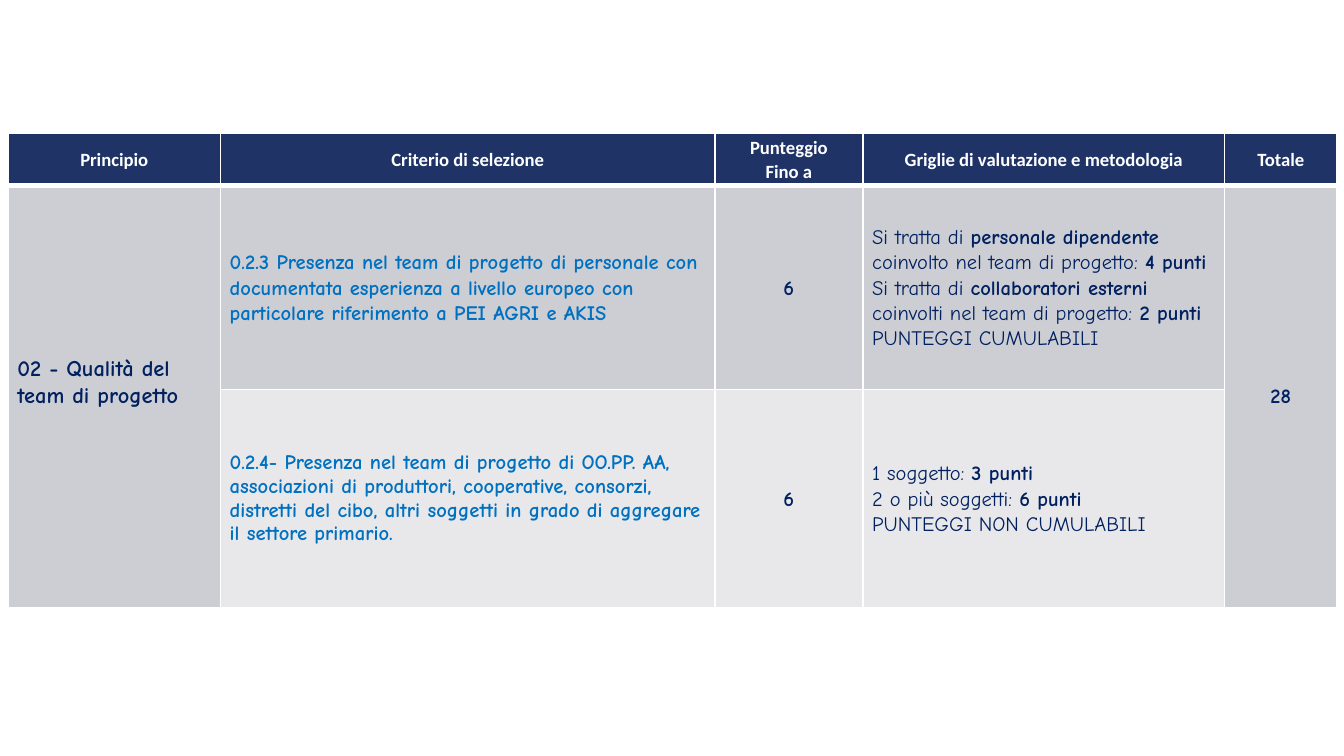
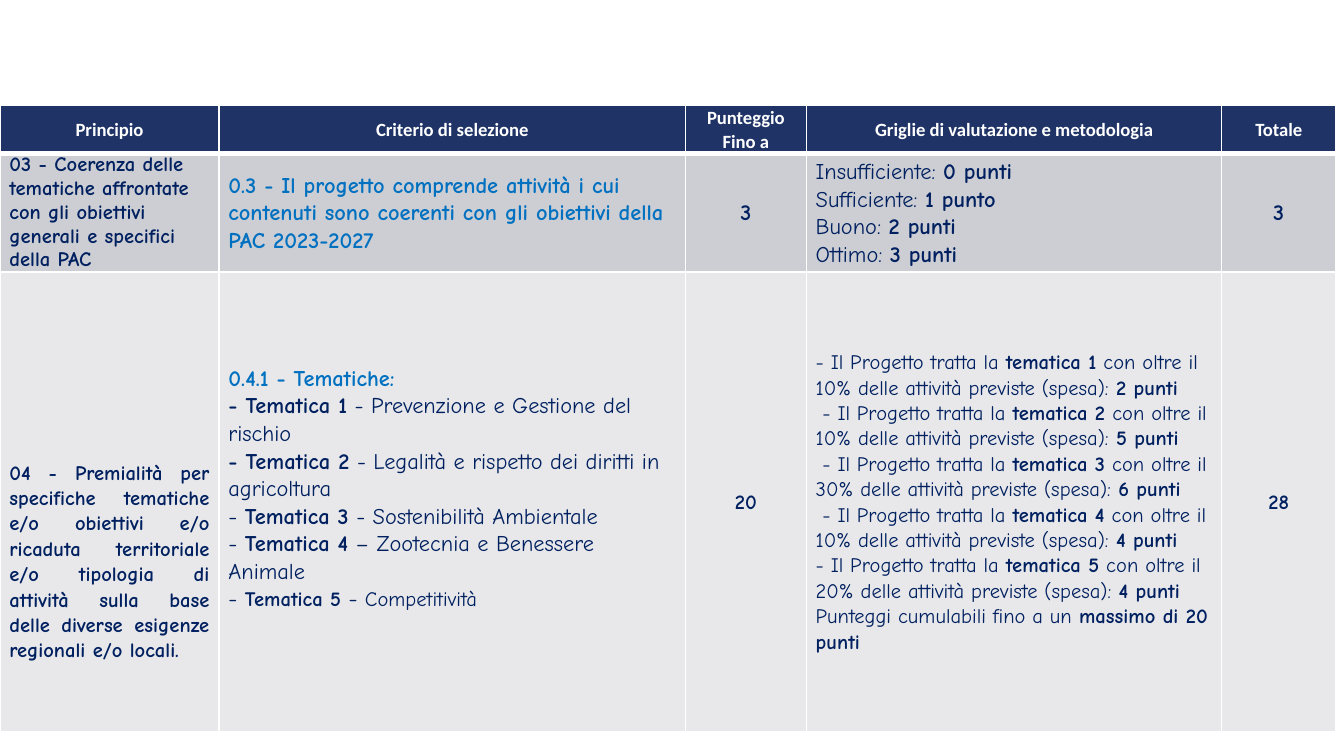
from lxml import etree
from pptx import Presentation
from pptx import util as u
from pptx.dml.color import RGBColor
from pptx.enum import text
from pptx.oxml.ns import qn

SLIDE_WIDTH = u.Inches(10)
SLIDE_HEIGHT = SLIDE_WIDTH * 9 // 16
WHITE, NAVY, DARK, BLUE = "FEFFFE", "1F3366", "002060", "0070C0"
BANDS = ["CDCED3", "E8E8EA"]
ALIGN = {"left": text.PP_ALIGN.LEFT, "center": text.PP_ALIGN.CENTER, "justify": text.PP_ALIGN.JUSTIFY}
ANCHOR = {"middle": text.MSO_ANCHOR.MIDDLE, "bottom": text.MSO_ANCHOR.BOTTOM}

HEADER = [
    ["Principio"],
    ["Criterio di selezione"],
    ["Punteggio", "Fino a"],
    ["Griglie di valutazione e metodologia"],
    ["Totale"],
]
HEADER_STYLE = dict(size=10, font="Calibri", color=WHITE, align="center")
COLUMN_STYLES = [
    dict(),
    dict(color=BLUE),
    dict(align="center"),
    dict(bold=False),
    dict(align="center"),
]


def theme_score(number, share, points, indent=0.0):
    line = f"- Il Progetto tratta la **tematica {number}** con oltre il {share}% delle attività previste (spesa): **{points} punti**"
    return dict(content=line, indent=indent)


TABLES = [
    dict(
        left=0.06, top=0.99,
        columns=[1.58, 3.68, 1.1, 2.69, 0.84],
        rows=[0.39, 1.52, 1.62],
        merged_columns=[0, 4],
        body=[
            [
                dict(lines=["02 - Qualità del team di progetto"], size=12, bottom=0.22),
                dict(lines=["0.2.3 Presenza nel team di progetto di personale con documentata esperienza a livello europeo con particolare riferimento a PEI AGRI e AKIS"]),
                dict(lines=["6"]),
                dict(lines=[
                    "Si tratta di **personale dipendente** coinvolto nel team di progetto: **4 punti**",
                    "Si tratta di **collaboratori esterni** coinvolti nel team di progetto: **2 punti**",
                    "PUNTEGGI CUMULABILI",
                ]),
                dict(lines=["28"], spacing=1.0),
            ],
            [
                None,
                dict(lines=["0.2.4- Presenza nel team di progetto di OO.PP. AA, associazioni di produttori, cooperative, consorzi, distretti del cibo, altri soggetti in grado di aggregare il settore primario."], spacing=1.0),
                dict(lines=["6"]),
                dict(lines=["1 soggetto: **3 punti**", "2 o più soggetti: **6 punti**", "PUNTEGGI NON CUMULABILI"]),
                None,
            ],
        ],
    ),
    dict(
        left=0, top=0.78,
        columns=[1.63, 3.47, 0.9, 3.09, 0.85],
        rows=[0.34, 0.81, 3.42],
        merged_columns=[],
        body=[
            [
                dict(lines=["03 - Coerenza delle tematiche affrontate con gli obiettivi generali e specifici della PAC"], spacing=1.0),
                dict(lines=["0.3 - Il progetto comprende attività i cui contenuti sono coerenti con gli obiettivi della PAC 2023-2027"], size=12),
                dict(lines=["3"], size=12),
                dict(lines=["Insufficiente: **0 punti**", "Sufficiente: **1 punto**", "Buono: **2 punti**", "Ottimo: **3 punti**"], size=12),
                dict(lines=["3"], size=12),
            ],
            [
                dict(lines=["04 - Premialità per specifiche tematiche e/o obiettivi e/o ricaduta territoriale e/o tipologia di attività sulla base delle diverse esigenze regionali e/o locali."],
                     align="justify", anchor="bottom", bottom=0.51),
                dict(lines=[
                    dict(content="**0.4.1 - Tematiche:**", color=BLUE),
                    "**- Tematica 1** - Prevenzione e Gestione del rischio",
                    "**- Tematica 2** - Legalità e rispetto dei diritti in agricoltura",
                    "- **Tematica 3** - Sostenibilità Ambientale",
                    "- **Tematica 4** – Zootecnia e Benessere Animale",
                    dict(content=[("- ", 12), ("**Tematica 5 **", 11), ("-", 12), ("** **Competitività", 11)]),
                ], size=12, color=DARK, bold=False, bottom=0.2),
                dict(lines=["20"]),
                dict(lines=[
                    theme_score(1, 10, 2),
                    theme_score(2, 10, 5, indent=0.05),
                    theme_score(3, 30, 6, indent=0.05),
                    theme_score(4, 10, 4, indent=0.05),
                    theme_score(5, 20, 4),
                    "Punteggi cumulabili fino a un **massimo di 20 punti**",
                ]),
                dict(lines=["28"]),
            ],
        ],
    ),
]


def rgb(value):
    return RGBColor.from_string(value)


def write_paragraph(paragraph, content, size=11, font="Comic Neue", color=DARK,
                    bold=True, align="left", spacing=1.07, indent=0.0):
    paragraph.alignment = ALIGN[align]
    paragraph.line_spacing = spacing
    if indent:
        paragraph._p.get_or_add_pPr().set("indent", str(u.Inches(indent)))
    pieces = content if isinstance(content, list) else [(content, size)]
    for piece, piece_size in pieces:
        for index, part in enumerate(piece.split("**")):
            if part:
                run = paragraph.add_run()
                run.text = part
                run.font.name = font
                run.font.size = u.Pt(piece_size)
                run.font.bold = bold != (index % 2 == 1)
                run.font.color.rgb = rgb(color)


def write_cell(cell, lines, anchor="middle", bottom=0.0, **style):
    cell.vertical_anchor = ANCHOR[anchor]
    cell.margin_left = cell.margin_right = u.Inches(0.07)
    cell.margin_top, cell.margin_bottom = 0, u.Inches(bottom)
    for index, line in enumerate(lines):
        frame = cell.text_frame
        paragraph = frame.add_paragraph() if index else frame.paragraphs[0]
        line = line if isinstance(line, dict) else dict(content=line)
        write_paragraph(paragraph, **{**style, **line})


def paint_cell(cell, fill, top=1, bottom=1):
    properties = cell._tc.get_or_add_tcPr()
    for side, width in [("L", 1), ("R", 1), ("T", top), ("B", bottom)]:
        border = etree.SubElement(properties, qn(f"a:ln{side}"), w=str(u.Pt(width)))
        solid = etree.SubElement(border, qn("a:solidFill"))
        etree.SubElement(solid, qn("a:srgbClr"), val=WHITE)
    cell.fill.solid()
    cell.fill.fore_color.rgb = rgb(fill)


def add_score_table(slide, left, top, columns, rows, merged_columns, body):
    shape = slide.shapes.add_table(
        len(rows), len(columns), u.Inches(left), u.Inches(top),
        u.Inches(sum(columns)), u.Inches(sum(rows)))
    table = shape.table
    table.first_row = table.horz_banding = False
    for column, width in zip(table.columns, columns):
        column.width = u.Inches(width)
    for row, height in zip(table.rows, rows):
        row.height = u.Inches(height)
    for column in merged_columns:
        table.cell(1, column).merge(table.cell(len(rows) - 1, column))

    for column, lines in enumerate(HEADER):
        cell = table.cell(0, column)
        write_cell(cell, lines, **HEADER_STYLE)
        paint_cell(cell, NAVY, bottom=3)
    for row, entries in enumerate(body, start=1):
        for column, entry in enumerate(entries):
            cell = table.cell(row, column)
            band = 0 if column in merged_columns else row - 1
            if entry:
                write_cell(cell, **{**COLUMN_STYLES[column], **entry})
            paint_cell(cell, BANDS[band], top=3 if row == 1 else 1)


def main():
    presentation = Presentation()
    presentation.slide_width = SLIDE_WIDTH
    presentation.slide_height = SLIDE_HEIGHT
    for content in TABLES:
        slide = presentation.slides.add_slide(presentation.slide_layouts[6])
        slide.background.fill.solid()
        slide.background.fill.fore_color.rgb = rgb(WHITE)
        add_score_table(slide, **content)
    presentation.save("out.pptx")


if __name__ == "__main__":
    main()
